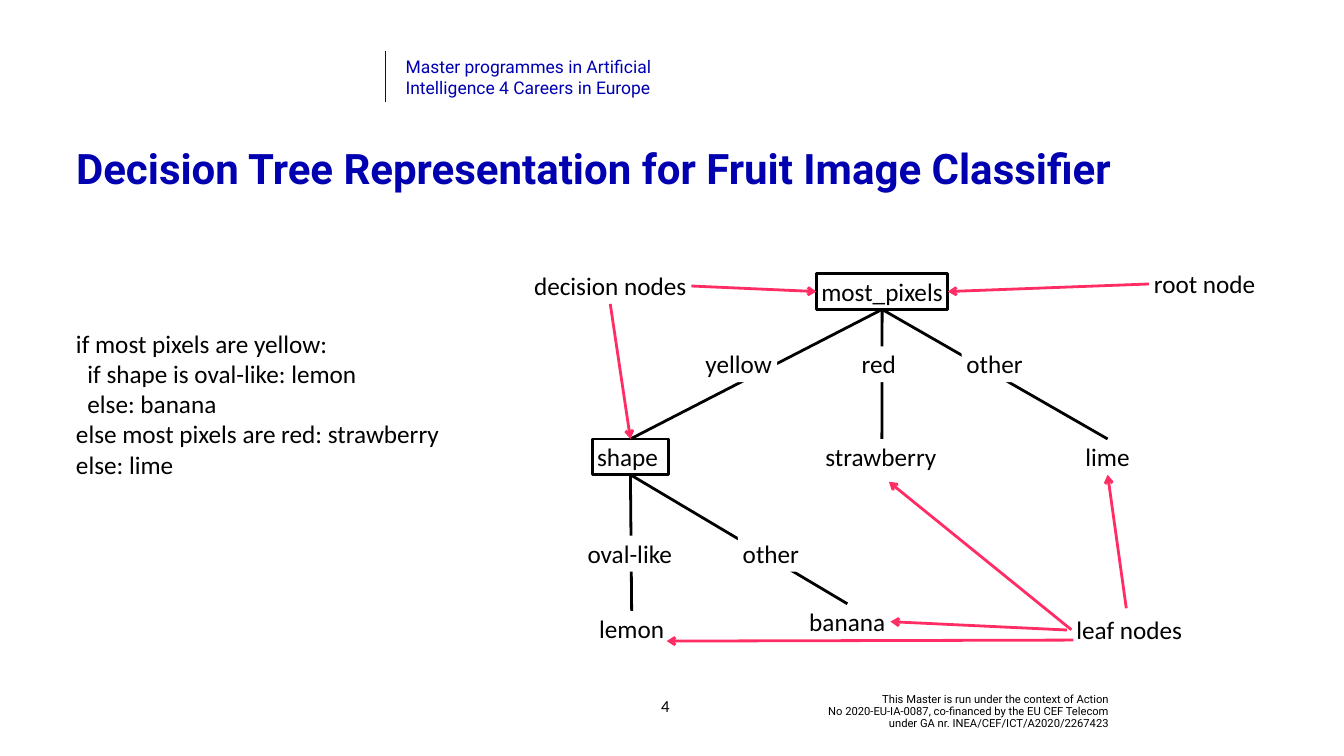
from dataclasses import dataclass
from typing import Optional, Union

from lxml import etree
from pptx import Presentation
from pptx.dml.color import RGBColor
from pptx.enum import shapes, text
from pptx.oxml import ns
from pptx.util import Inches, Pt


@dataclass(frozen=True)
class Theme:
    ink: RGBColor = RGBColor(0x00, 0x00, 0x00)
    paper: RGBColor = RGBColor(0xFF, 0xFF, 0xFF)
    brand: RGBColor = RGBColor(0x00, 0x00, 0xB0)
    pointer: RGBColor = RGBColor(0xFF, 0x2D, 0x64)
    heading_font: str = "Roboto"
    body_font: str = "Calibri"
    title_size: int = 60
    body_size: int = 36
    header_size: int = 25
    number_size: int = 24
    credit_size: int = 16
    stroke: float = 4
    hairline: float = 0.5


@dataclass(frozen=True)
class Node:
    """A word in the tree: plain, framed (decision) or masking an edge (label)."""
    word: str
    left: float
    top: float
    width: float
    style: str = "plain"
    wrap: bool = False


@dataclass(frozen=True)
class Anchor:
    """The middle of one side of a named node."""
    node: str
    side: int


End = Union[Anchor, tuple[float, float]]


@dataclass(frozen=True)
class Link:
    start: End
    end: End


THEME = Theme()
TOP, LEFT, BOTTOM, RIGHT = range(4)
NODE_HEIGHT = 0.71
LABEL_ROW, CHILD_ROW, LOWER_LABEL_ROW = 6.87, 8.71, 10.63

NODES = [
    Node("most_pixels", 16.2, 5.43, 2.61, "framed"),
    Node("shape", 11.75, CHILD_ROW, 1.52, "framed"),
    Node("strawberry", 16.28, CHILD_ROW, 2.44),
    Node("lime", 21.44, CHILD_ROW, 1.08),
    Node("lemon", 11.79, 12.12, 1.49),
    Node("banana", 15.96, 11.98, 1.71),
    Node("root node", 22.8, 5.28, 2.21),
    Node("decision nodes", 10.5, 5.32, 3.22),
    Node("leaf nodes", 21.26, 12.14, 2.64, wrap=True),
]
EDGE_LABELS = [
    Node("yellow", 13.9, LABEL_ROW, 1.52, "label"),
    Node("red", 17, LABEL_ROW, 0.88, "label"),
    Node("other", 19.08, LABEL_ROW, 1.32, "label"),
    Node("oval-like", 11.56, LOWER_LABEL_ROW, 1.91, "label"),
    Node("other", 14.64, LOWER_LABEL_ROW, 1.32, "label"),
]
EDGES = [Link(Anchor(parent, BOTTOM), Anchor(child, TOP)) for parent, child in (
    ("most_pixels", "shape"),
    ("most_pixels", "strawberry"),
    ("most_pixels", "lime"),
    ("shape", "lemon"),
    ("shape", "banana"),
)]
# Each pointer starts at its arrowhead
POINTERS = [
    Link(Anchor("most_pixels", RIGHT), Anchor("root node", LEFT)),
    Link(Anchor("most_pixels", LEFT), Anchor("decision nodes", RIGHT)),
    Link(Anchor("shape", TOP), Anchor("decision nodes", BOTTOM)),
    Link((17.64, 9.56), Anchor("leaf nodes", LEFT)),
    Link(Anchor("lime", BOTTOM), (22.35, 12.07)),
    Link((13.23, 12.72), (21.3, 12.7)),
    Link(Anchor("banana", RIGHT), (21.17, 12.5)),
]
RULES = """if most pixels are yellow:
  if shape is oval-like: lemon
  else: banana
else most pixels are red: strawberry
else: lime"""
CREDIT = ("This Master is run under the context of Action\v"
          "No 2020-EU-IA-0087, co-financed by the EU CEF Telecom\v"
          "under GA nr. INEA/CEF/ICT/A2020/2267423")


def write(shape, words: str, size: float, font: str, color: RGBColor,
          bold: bool = False, align=text.PP_ALIGN.LEFT,
          anchor=text.MSO_ANCHOR.TOP, spacing=None, wrap: bool = True) -> None:
    frame = shape.text_frame
    frame.text = words
    frame.word_wrap = wrap
    frame.vertical_anchor = anchor
    for paragraph in frame.paragraphs:
        paragraph.alignment = align
        if spacing is not None:
            paragraph.line_spacing = spacing
        for run in paragraph.runs:
            run.font.name = font
            run.font.size = Pt(size)
            run.font.bold = bold
            run.font.color.rgb = color


def add_text(slide, left: float, top: float, width: float, height: float,
             words: str, size: float, font: str, color: RGBColor, **layout) -> None:
    box = slide.shapes.add_textbox(
        Inches(left), Inches(top), Inches(width), Inches(height))
    write(box, words, size, font, color, **layout)


def add_node(slide, node: Node):
    bounds = [Inches(v) for v in (node.left, node.top, node.width, NODE_HEIGHT)]
    if node.style == "plain":
        shape = slide.shapes.add_textbox(*bounds)
    else:
        shape = slide.shapes.add_shape(shapes.MSO_SHAPE.RECTANGLE, *bounds)
        shape.shadow.inherit = False
        if node.style == "framed":
            shape.fill.background()
            shape.line.color.rgb = THEME.ink
            shape.line.width = Pt(THEME.stroke)
        else:
            shape.fill.solid()
            shape.fill.fore_color.rgb = THEME.paper
            shape.line.fill.background()
    write(shape, node.word, THEME.body_size, THEME.body_font, THEME.ink, wrap=node.wrap)
    shape.text_frame.auto_size = text.MSO_AUTO_SIZE.SHAPE_TO_FIT_TEXT
    return shape


def add_link(slide, link: Link, drawn: dict, color: RGBColor,
             width: float, arrow: Optional[str] = None) -> None:
    line = slide.shapes.add_connector(shapes.MSO_CONNECTOR.STRAIGHT, 0, 0, 0, 0)
    if isinstance(link.start, Anchor):
        line.begin_connect(drawn[link.start.node], link.start.side)
    else:
        line.begin_x, line.begin_y = (Inches(v) for v in link.start)
    if isinstance(link.end, Anchor):
        line.end_connect(drawn[link.end.node], link.end.side)
    else:
        line.end_x, line.end_y = (Inches(v) for v in link.end)
    line.line.color.rgb = color
    line.line.width = Pt(width)
    if arrow:
        etree.SubElement(line.line._get_or_add_ln(), ns.qn("a:headEnd"), type=arrow)
    etree.SubElement(line._element.spPr, ns.qn("a:effectLst"))


def main() -> None:
    deck = Presentation()
    deck.slide_width, deck.slide_height = Inches(26.67), Inches(15)
    slide = deck.slides.add_slide(deck.slide_layouts[6])

    # Header and footer
    add_link(slide, Link((7.65, 1.01), (7.65, 2.03)), {}, THEME.brand, THEME.hairline)
    add_text(slide, 7.95, 1.06, 6.37, 0.94,
             "Master programmes in Artificial\vIntelligence 4 Careers in Europe",
             THEME.header_size, THEME.heading_font, THEME.brand)
    add_text(slide, 15.02, 13.74, 7.08, 0.76, CREDIT,
             THEME.credit_size, THEME.heading_font, THEME.ink, spacing=0.9,
             align=text.PP_ALIGN.RIGHT, anchor=text.MSO_ANCHOR.MIDDLE)
    add_text(slide, 12.65, 13.61, 1.11, 0.8, "4",
             THEME.number_size, THEME.body_font, THEME.ink,
             align=text.PP_ALIGN.CENTER, anchor=text.MSO_ANCHOR.MIDDLE)

    # Title and rules
    add_text(slide, 1.41, 2.81, 23.61, 2.29,
             "Decision Tree Representation for Fruit Image Classifier",
             THEME.title_size, THEME.heading_font, THEME.brand, bold=True, spacing=Pt(70))
    add_text(slide, 1.41, 6.46, 9.1, 3.13, RULES,
             THEME.body_size, THEME.body_font, THEME.ink)

    # Tree: edge labels lie over the edges, pointers on top
    drawn = {node.word: add_node(slide, node) for node in NODES}
    for edge in EDGES:
        add_link(slide, edge, drawn, THEME.ink, THEME.stroke)
    for label in EDGE_LABELS:
        add_node(slide, label)
    for pointer in POINTERS:
        add_link(slide, pointer, drawn, THEME.pointer, THEME.stroke, arrow="arrow")

    deck.save("out.pptx")


if __name__ == "__main__":
    main()
